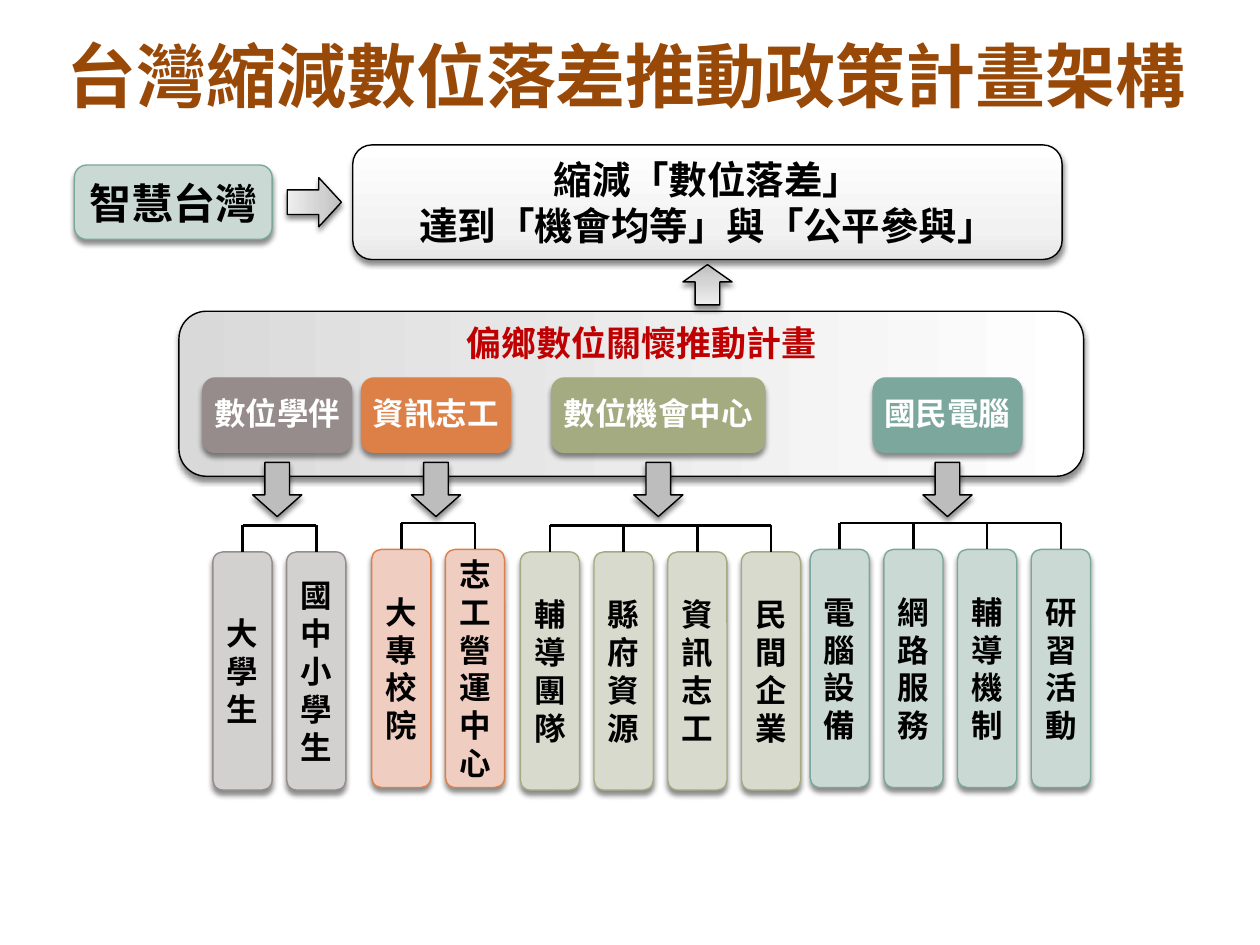
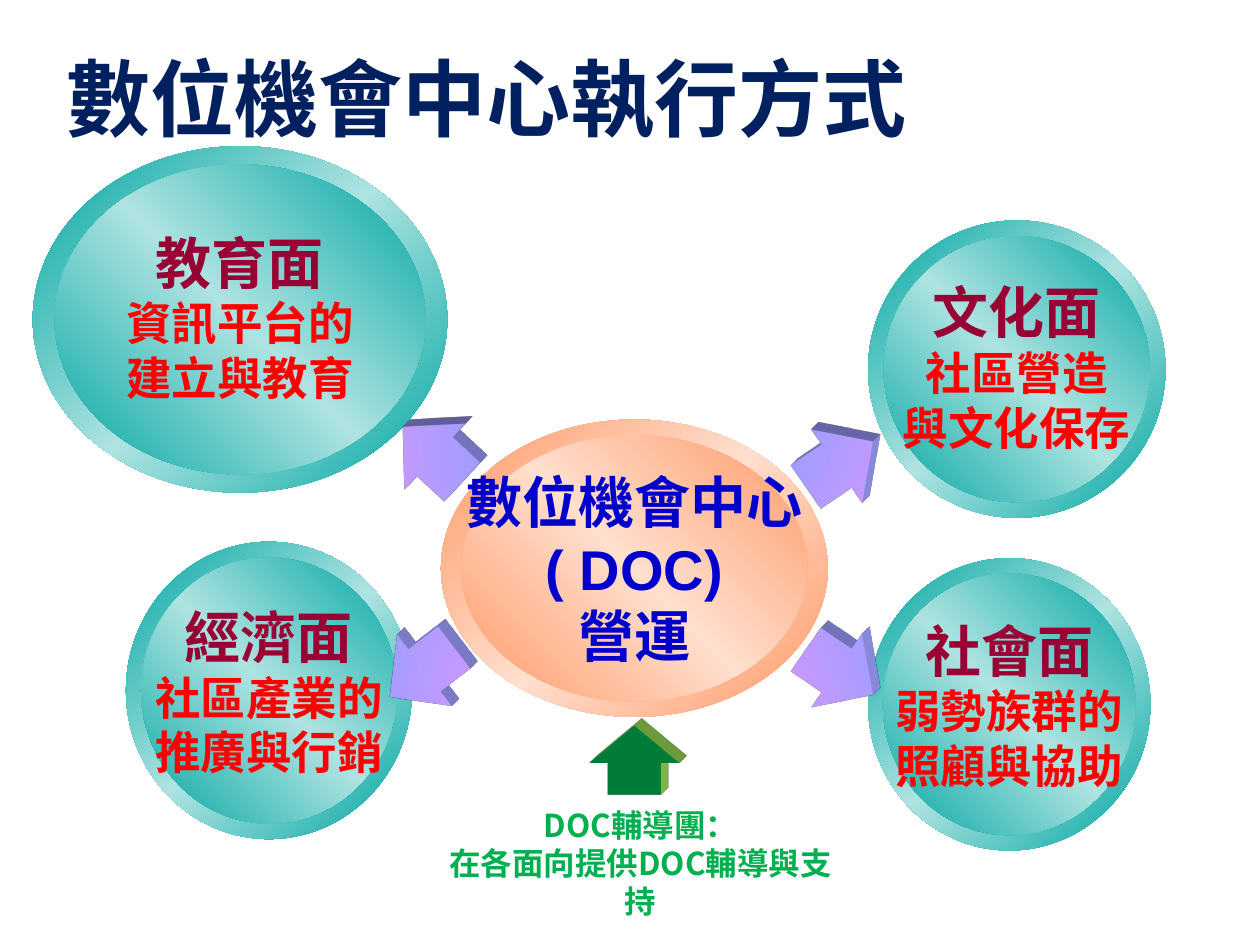
from lxml import etree
from pptx import Presentation
from pptx.dml.color import RGBColor
from pptx.enum import shapes, text
from pptx.oxml import parse_xml
from pptx.oxml.ns import qn
from pptx.util import Inches, Pt

# Shared look
NS = 'xmlns:a="http://schemas.openxmlformats.org/drawingml/2006/main"'
KIND = shapes.MSO_SHAPE
MID, TOP = text.MSO_ANCHOR.MIDDLE, text.MSO_ANCHOR.TOP
LEFT, MIDDLE = text.PP_ALIGN.LEFT, text.PP_ALIGN.CENTER
NOTO, ARIAL, TIMES = "Noto Sans CJK SC", "Arial", "Times New Roman"

BLACK, WHITE = RGBColor(0, 0, 0), RGBColor(255, 255, 255)
BROWN, NAVY = RGBColor(0x98, 0x48, 0x07), RGBColor(0, 0x20, 0x60)
CRIMSON, GREY = RGBColor(0xC0, 0, 0), RGBColor(0xBD, 0xBD, 0xBD)
TAUPE, STONE = RGBColor(0x96, 0x8C, 0x8C), RGBColor(0xD3, 0xD0, 0xD0)
RUST, PEACH = RGBColor(0xDD, 0x80, 0x47), RGBColor(0xEF, 0xCD, 0xC1)
OLIVE, SAGE = RGBColor(0xA5, 0xAB, 0x81), RGBColor(0xD8, 0xDA, 0xCD)
TEAL, MIST = RGBColor(0x7B, 0xA7, 0x9D), RGBColor(0xCB, 0xD9, 0xD5)
BLUE, WINE = RGBColor(0, 0, 0xCC), RGBColor(0x99, 0, 0x33)
RED, GREEN = RGBColor(255, 0, 0), RGBColor(0, 0xB0, 0x50)
LIME, LILAC = RGBColor(0x92, 0xD0, 0x50), RGBColor(0x9D, 0x9D, 0xFF)

# Gradient stops: (percent, colour)
PANEL = [(0, "D9D9D9"), (35, "E6E6E6"), (100, "FFFFFF")]
GOAL = [(0, "E6E6E6"), (25, "F2F2F2"), (100, "FFFFFF")]
STEEL = [(0, "BDBDBD"), (35, "D1D1D1"), (100, "EEEEEE")]
CORAL = [(0, "FF9966"), (50, "FFDFCE"), (100, "FF9966")]
AQUA = [(0, "00A6A2"), (50, "AEE3E1"), (100, "00A6A2")]
VIOLET = [(0, "9D9DFF"), (100, "CC99FF")]

# Slide 1 content
PLAN = "台灣縮減數位落差推動政策計畫架構"
VISION = "智慧台灣"
AIMS = ["縮減「數位落差」", "達到「機會均等」與「公平參與」"]
CARE = "偏鄉數位關懷推動計畫"
# name, left, width, colour, tint, left and top of the first unit, units
TEAMS = [
    ("數位學伴", 1.61, 1.18, TAUPE, STONE, 1.69, 4.38, ["大學生", "國中小學生"]),
    ("資訊志工", 2.87, 1.18, RUST, PEACH, 2.95, 4.36, ["大專校院", "志工營運中心"]),
    ("數位機會中心", 4.38, 1.69, OLIVE, SAGE, 4.13, 4.38,
     ["輔導團隊", "縣府資源", "資訊志工", "民間企業"]),
    ("國民電腦", 6.93, 1.18, TEAL, MIST, 6.43, 4.36,
     ["電腦設備", "網路服務", "輔導機制", "研習活動"]),
]

# Slide 2 content
WAYS = "數位機會中心執行方式"
HUB = ["數位機會中心", "( DOC)", "營運"]
FACETS = [
    ((0.26, 1.16, 3.29, 2.75), 0.05, ["教育面", "資訊平台的", "建立與教育"]),
    ((6.89, 4.43, 2.24, 2.32), 0, ["社會面", "弱勢族群的", "照顧與協助"]),
    ((1, 4.3, 2.27, 2.36), 0, ["經濟面", "社區產業的", "推廣與行銷"]),
    ((6.89, 1.75, 2.36, 2.36), 0.05, ["文化面", "社區營造", "與文化保存"]),
]
SPOKES = [(6.34, 3.33, 325.5), (3.03, 4.98, 142.6),
          (6.34, 4.98, 34.3), (3.11, 3.25, 222.8)]
GUIDE = ["DOC輔導團：", "在各面向提供DOC輔導與支持"]


def write(shape, lines, size, font, color, align=MIDDLE, anchor=MID,
          wrap=False, space=None, rest=None):
    """Put one paragraph per line; rest is (size, colour) after the first."""
    frame = shape.text_frame
    frame.word_wrap, frame.vertical_anchor = wrap, anchor
    for i, line in enumerate(lines):
        para = frame.paragraphs[0] if i == 0 else frame.add_paragraph()
        para.alignment, para.line_spacing = align, space
        run = para.add_run()
        run.text = line
        big, ink = rest if rest and i else (size, color)
        look = {"size": Pt(big), "name": font, "bold": True}
        for key, value in look.items():
            setattr(run.font, key, value)
        run.font.color.rgb = ink
        latin = run.font._element.find(qn("a:latin"))
        latin.addnext(parse_xml(f'<a:ea {NS} typeface="{NOTO}"/>'))


def paint(shape, fill, angle=0):
    if isinstance(fill, RGBColor):
        shape.fill.solid()
        shape.fill.fore_color.rgb = fill
        return
    shape.fill.gradient()
    shape.fill.gradient_angle = (360 - angle) % 360
    stops = shape._element.spPr.find(qn("a:gradFill")).find(qn("a:gsLst"))
    for stop in list(stops):
        stops.remove(stop)
    for spot, tone in fill:
        stop = etree.SubElement(stops, qn("a:gs"), pos=str(spot * 1000))
        etree.SubElement(stop, qn("a:srgbClr"), val=tone)


def draw(slide, kind, box, fill=None, edge=None, angle=0, shade=False, adj=()):
    shape = slide.shapes.add_shape(kind, *map(Inches, box))
    shape.shadow.inherit = False
    if fill:
        paint(shape, fill, angle)
    else:
        shape.fill.background()
    if edge is None:
        shape.line.fill.background()
    else:
        shape.line.color.rgb = edge
        shape.line.width = Pt(0.79)
    for i, value in enumerate(adj):
        shape.adjustments[i] = value
    if shade:
        shape._element.spPr.find(qn("a:effectLst")).append(parse_xml(
            f'<a:outerShdw {NS} blurRad="{Pt(3)}" dist="{Pt(2.4)}" dir="5400000"'
            ' rotWithShape="0"><a:srgbClr val="000000"><a:alpha val="45000"/>'
            '</a:srgbClr></a:outerShdw>'))
    return shape


def rule(slide, x1, y1, x2, y2, end=None):
    line = slide.shapes.add_connector(
        shapes.MSO_CONNECTOR.STRAIGHT, *map(Inches, (x1, y1, x2, y2)))
    line.line.color.rgb = BLACK
    line.line.width = Pt(1.5)
    if end is not None:
        line.end_connect(end, 0)
    etree.SubElement(line._element.spPr, qn("a:effectLst"))


def title(slide, box, words, size, font, color):
    frame = slide.shapes.add_textbox(*map(Inches, box))
    write(frame, [words], size, font, color, align=LEFT, wrap=True)


def team(slide, name, left, wide, color, tint, first, top, units):
    """A heading, its arrow, a bracket and a row of upright units."""
    unit, pitch, drop = 0.47, 0.585, 0.21
    draw(slide, KIND.DOWN_ARROW, (left + wide / 2 - 0.195, 3.67, 0.39, 0.43),
         GREY, BLACK, shade=True, adj=(0.5, 0.44))
    head = draw(slide, KIND.FLOWCHART_ALTERNATE_PROCESS,
                (left, 3, wide, 0.59), color, color, shade=True)
    write(head, [name], 18, TIMES, WHITE, space=0.9)
    mids = [first + unit / 2 + pitch * i for i in range(len(units))]
    rule(slide, mids[0], top - drop, mids[-1], top - drop)
    for mid, words in zip(mids, units):
        card = draw(slide, KIND.ROUNDED_RECTANGLE,
                    (mid - unit / 2, top, unit, 1.89), tint, color, shade=True)
        write(card, list(words), 18, NOTO, BLACK)
        rule(slide, mid, top - drop, mid, top, card)


def disc(slide, box, fill):
    """A rim with an inner ellipse, which is handed back for its text."""
    x, y, w, h = box
    draw(slide, KIND.OVAL, box, fill, angle=45)
    gap = 0.0525
    inner = (x + w * gap, y + h * gap, w * (1 - 2 * gap), h * (1 - 2 * gap))
    return draw(slide, KIND.OVAL, inner, fill, angle=315)


def block(slide, box, turn, fill, side):
    """A turned arrow with depth."""
    arrow = draw(slide, KIND.RIGHT_ARROW, box, fill, angle=90, adj=(0.59, 0.54))
    arrow.rotation = turn
    spin = '<a:rot lat="0" lon="0" rev="0"/>'
    arrow._element.spPr.append(parse_xml(
        f'<a:scene3d {NS}><a:camera prst="legacyObliqueTopRight">{spin}</a:camera>'
        '<a:lightRig rig="legacyFlat3" dir="b"/></a:scene3d>'))
    arrow._element.spPr.append(parse_xml(
        f'<a:sp3d {NS} extrusionH="152400" prstMaterial="legacyMatte">'
        f'<a:extrusionClr><a:srgbClr val="{side}"/></a:extrusionClr></a:sp3d>'))


def frame_slide(slide):
    title(slide, (0.43, 0.21, 9.37, 0.77), PLAN, 40, ARIAL, BROWN)
    # Programme panel
    draw(slide, KIND.FLOWCHART_ALTERNATE_PROCESS, (1.42, 2.47, 7.18, 1.31),
         PANEL, BLACK, shade=True)
    care = draw(slide, KIND.FLOWCHART_ALTERNATE_PROCESS, (3.58, 2.48, 3.14, 0.46))
    write(care, [CARE], 20, NOTO, CRIMSON, align=LEFT, anchor=TOP, wrap=True)
    for item in TEAMS:
        team(slide, *item)
    # Vision and aims
    goal = draw(slide, KIND.ROUNDED_RECTANGLE, (2.8, 1.15, 5.63, 0.91),
                GOAL, BLACK, 270, True)
    write(goal, AIMS, 22, TIMES, BLACK, wrap=True)
    seed = draw(slide, KIND.FLOWCHART_ALTERNATE_PROCESS, (0.59, 1.31, 1.57, 0.59),
                MIST, TEAL, shade=True)
    write(seed, [VISION], 24, TIMES, BLACK)
    draw(slide, KIND.UP_ARROW, (5.42, 2.1, 0.39, 0.32), STEEL, BLACK, 90, True,
         (0.5, 0.43))
    draw(slide, KIND.RIGHT_ARROW, (2.28, 1.41, 0.43, 0.39), STEEL, BLACK, 180, True,
         (0.5, 0.46))


def ways_slide(slide):
    title(slide, (0.43, 0.29, 8.5, 0.96), WAYS, 48, NOTO, NAVY)
    # Hub and facets
    write(disc(slide, (3.5, 3.33, 3.07, 2.36), CORAL), HUB, 32, ARIAL, BLUE)
    for box, foot, lines in FACETS:
        face = disc(slide, box, AQUA)
        face.text_frame.margin_top = 0
        face.text_frame.margin_bottom = Inches(foot)
        write(face, lines, 32, ARIAL, WINE, rest=(26, RED))
    # Arrows and support note
    for x, y, turn in SPOKES:
        block(slide, (x, y, 0.64, 0.71), turn, VIOLET, LILAC)
    note = draw(slide, KIND.RECTANGLE, (3.35, 6.35, 3.47, 0.71), WHITE)
    write(note, GUIDE, 18, NOTO, GREEN, anchor=TOP, wrap=True)
    block(slide, (4.76, 5.68, 0.55, 0.71), 270, GREEN, LIME)


def main():
    deck = Presentation()
    deck.slide_width, deck.slide_height = Inches(10), Inches(7.5)
    for build in (frame_slide, ways_slide):
        build(deck.slides.add_slide(deck.slide_layouts[6]))
    deck.save("out.pptx")


if __name__ == "__main__":
    main()
